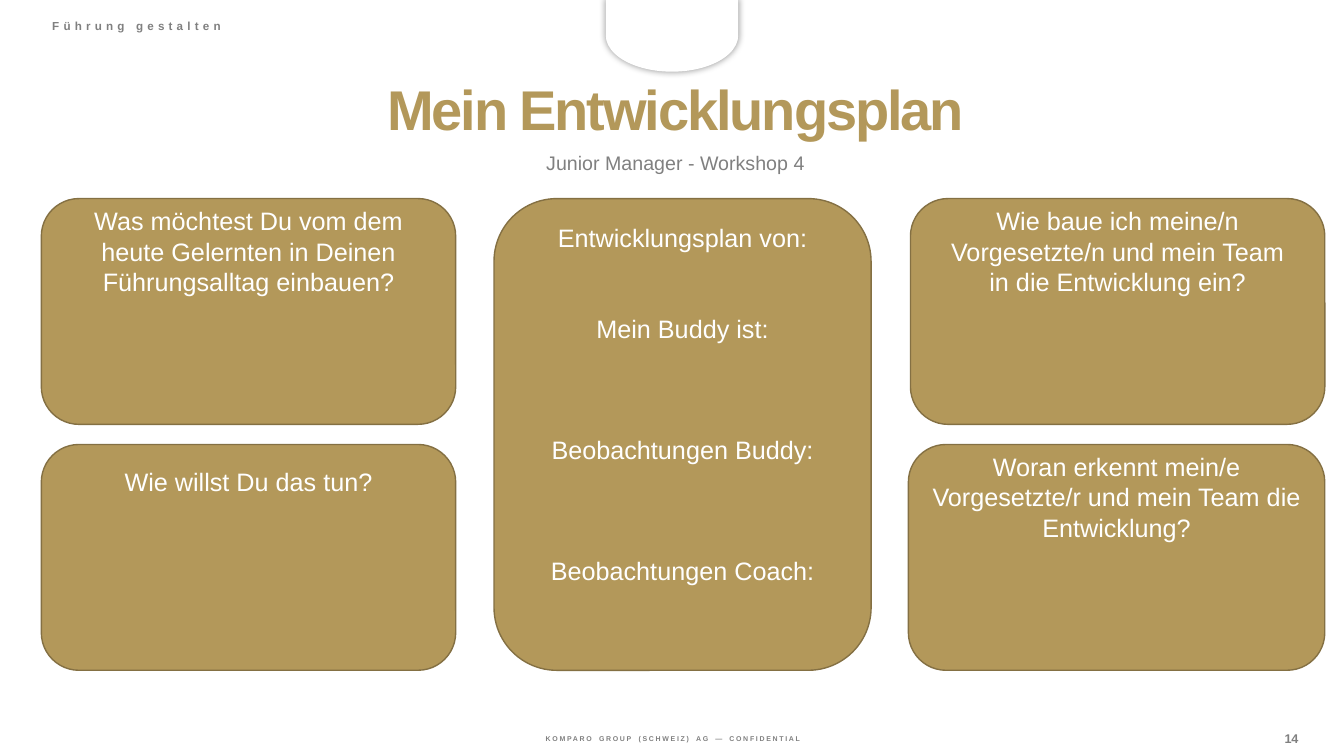
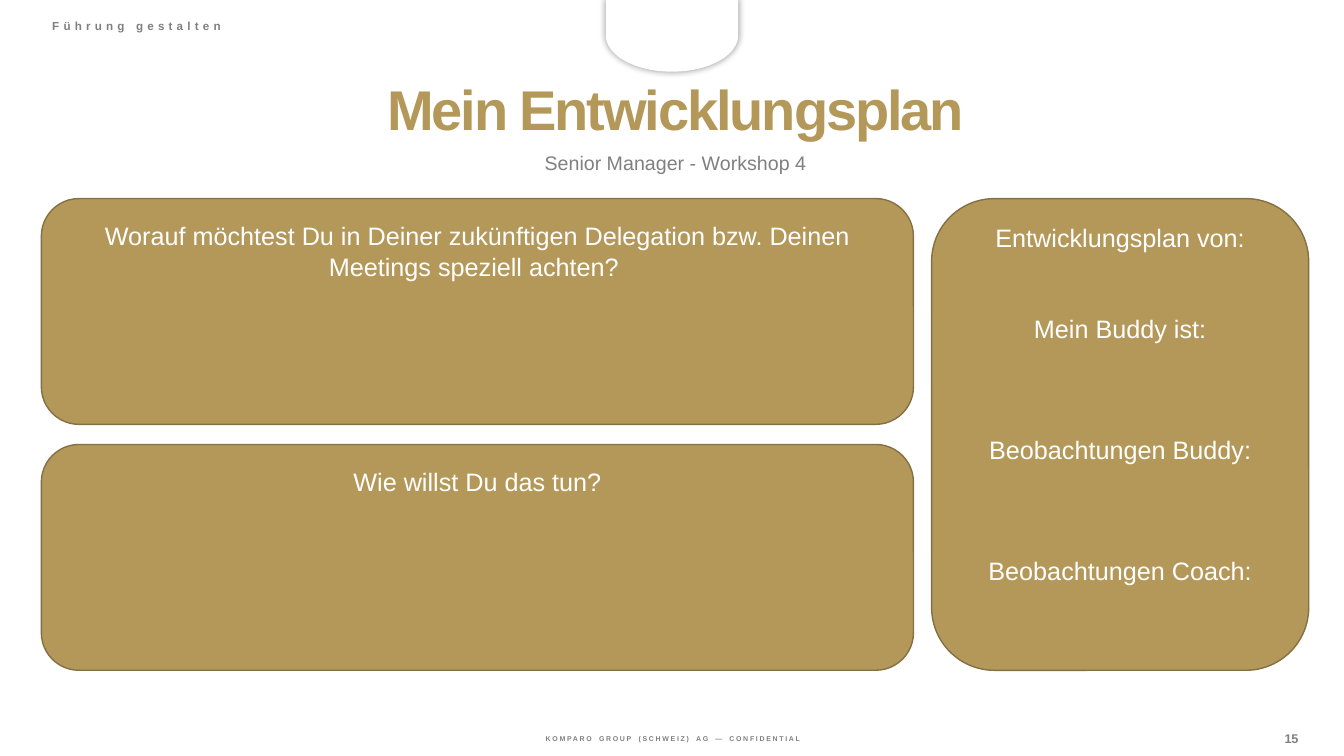
from lxml import etree
from pptx import Presentation
from pptx import util as u
from pptx.dml import color
from pptx.enum import shapes, text
from pptx.oxml import ns

HUES = {"gold": "B3985A", "edge": "847043", "gray": "808080", "white": "FFFFFF", "black": "000000"}
FONT = "Arial"
LEFT, TOP, GAP = 0.41, 1.97, 0.2
HIGH, SLIM = 2.24, 3.74
TALL = 2 * HIGH + GAP
LINE = 0.3
HOW = "Wie willst Du das tun?"
PLAN = ["Entwicklungsplan von:", "Mein Buddy ist:", "Beobachtungen Buddy:", "Beobachtungen Coach:"]
SKIPS = [0, 2, 3, 3]


def tint(name):
    return color.RGBColor.from_string(HUES[name])


def fill_in(para, line, gap):
    if not gap:
        para.text = line
        return
    for i, word in enumerate(line.split(" ")):
        if i:
            para.add_run().text = " "
        para.add_run().text = word


def write(frame, lines, size=18, hue="white", bold=False, track=0, gap=0, lead=None, center=True, skips=(0,)):
    frame.word_wrap = True
    for i, (line, skip) in enumerate(zip(lines, skips)):
        para = frame.paragraphs[0] if i == 0 else frame.add_paragraph()
        fill_in(para, line, gap)
        para.alignment = text.PP_ALIGN.CENTER if center else text.PP_ALIGN.LEFT
        if lead:
            para.line_spacing = lead
        if skip:
            para.space_before = u.Inches(skip * LINE)
        for run in para.runs:
            font = run.font
            font.name, font.size, font.bold = FONT, u.Pt(size), bold
            font.color.rgb = tint(hue)
            space = gap if run.text == " " else track
            if space:
                run._r.get_or_add_rPr().set("spc", str(round(space * 100)))


def label(slide, box, words, tight=False, middle=False, **style):
    frame = slide.shapes.add_textbox(*map(u.Inches, box)).text_frame
    if tight:
        frame.margin_left = frame.margin_right = frame.margin_bottom = 0
        frame.margin_top = u.Inches(0.01)
    frame.vertical_anchor = text.MSO_ANCHOR.MIDDLE if middle else text.MSO_ANCHOR.TOP
    write(frame, [words], **style)


def block(slide, kind, box, fill, edge):
    shape = slide.shapes.add_shape(kind, *map(u.Inches, box))
    shape.shadow.inherit = False
    shape.fill.solid()
    shape.fill.fore_color.rgb = tint(fill)
    shape.line.color.rgb = tint(edge)
    shape.line.width = u.Pt(1)
    return shape


def card(slide, box, lines, room, skips=(0,)):
    frame = block(slide, shapes.MSO_SHAPE.ROUNDED_RECTANGLE, box, "gold", "edge").text_frame
    frame.vertical_anchor = text.MSO_ANCHOR.MIDDLE
    frame.margin_top = 0
    frame.margin_bottom = u.Inches(room * LINE)
    write(frame, lines, lead=u.Inches(LINE), skips=skips)


def stack(slide, cards):
    for i, (left, width, words, room) in enumerate(cards):
        card(slide, (left, TOP + i * (HIGH + GAP), width, HIGH), [words], room)


def plan(slide, left):
    card(slide, (left, TOP, SLIM, TALL), PLAN, 2, SKIPS)


def badge(slide, box):
    shape = block(slide, shapes.MSO_SHAPE.FLOWCHART_DELAY, box, "white", "white")
    shape.rotation = 90
    glow = shape._element.spPr.find(ns.qn("a:effectLst"))
    shade = etree.SubElement(glow, ns.qn("a:outerShdw"), blurRad=str(u.Pt(5)), dist="0", dir="0", rotWithShape="0")
    tone = etree.SubElement(shade, ns.qn("a:srgbClr"), val=HUES["black"])
    etree.SubElement(tone, ns.qn("a:alpha"), val="40000")


def base(deck, page, level):
    slide = deck.slides.add_slide(deck.slide_layouts[6])
    label(slide, (4.14, 7.28, 5.07, 0.1), "KOMPARO GROUP (SCHWEIZ) AG — CONFIDENTIAL",
          tight=True, size=5, hue="gray", bold=True, track=1.2, gap=2.4)
    badge(slide, (6.31, -0.3, 0.71, 1.3))
    label(slide, (12.43, 7.24, 0.76, 0.16), str(page), tight=True, size=9, hue="gray", bold=True, track=-0.1)
    label(slide, (LEFT, 0.76, 12.58, 0.71), "Mein Entwicklungsplan",
          middle=True, size=40, hue="gold", bold=True, track=-1.5, lead=0.9)
    label(slide, (0.42, 0.17, 4.87, 0.21), "Führung gestalten",
          size=8.3, hue="gray", bold=True, track=3, lead=0.8, center=False)
    label(slide, (LEFT, 1.49, 12.58, 0.31), f"{level} Manager - Workshop 4", size=14, hue="gray", lead=0.8)
    return slide


def junior(deck):
    slide = base(deck, 14, "Junior")
    stack(slide, [
        (LEFT, 4.11, "Was möchtest Du vom dem heute Gelernten in Deinen Führungsalltag einbauen?", 4),
        (LEFT, 4.11, HOW, 5)])
    stack(slide, [
        (9.03, 4.11, "Wie baue ich meine/n Vorgesetzte/n und mein Team\vin die Entwicklung ein?", 4),
        (9.01, 4.13, "Woran erkennt mein/e Vorgesetzte/r und mein Team die Entwicklung?", 4)])
    plan(slide, 4.9)


def senior(deck):
    slide = base(deck, 15, "Senior")
    stack(slide, [
        (LEFT, 8.65, "Worauf möchtest Du in Deiner zukünftigen Delegation bzw. Deinen Meetings speziell achten? ", 4),
        (LEFT, 8.65, HOW, 5)])
    plan(slide, 9.24)


def main():
    deck = Presentation()
    deck.slide_width, deck.slide_height = u.Inches(13.33), u.Inches(7.5)
    junior(deck)
    senior(deck)
    deck.save("out.pptx")


if __name__ == "__main__":
    main()
